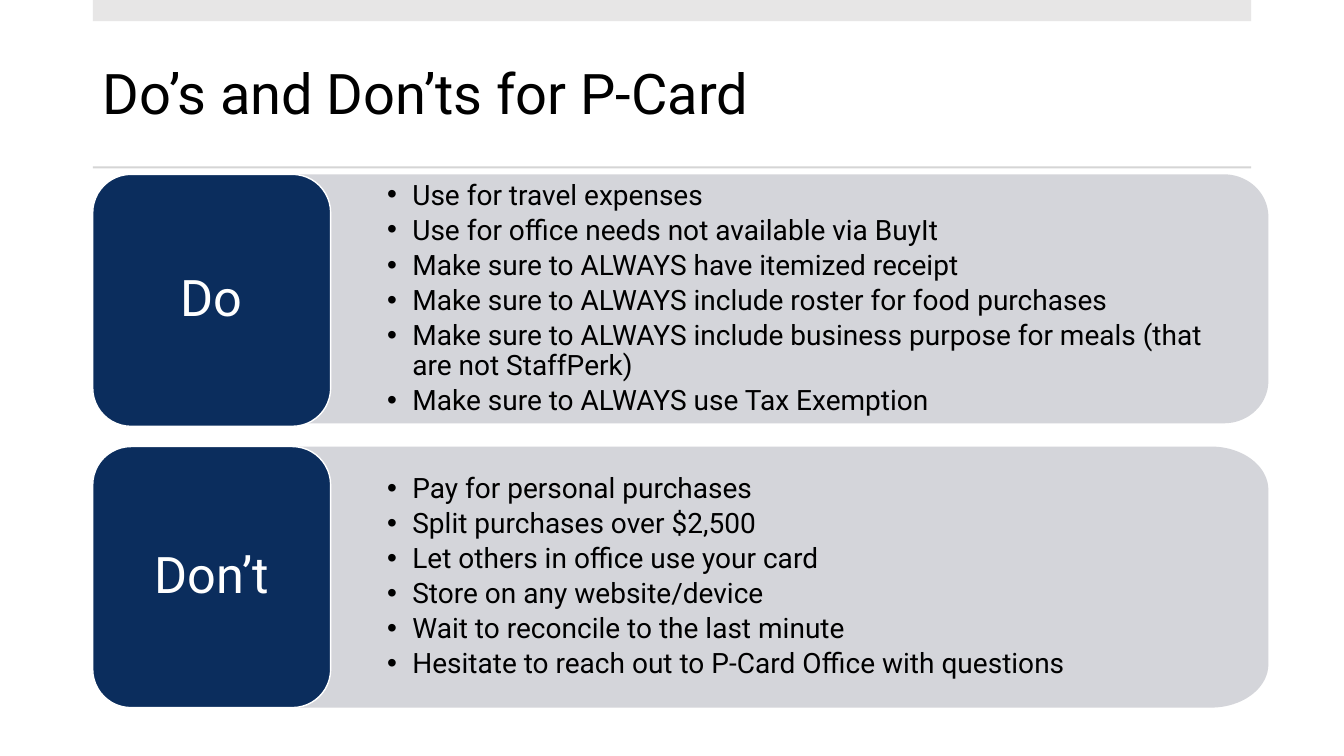
from math import cos, pi, sin

from lxml.etree import SubElement
from pptx import Presentation
from pptx.dml.color import RGBColor
from pptx.enum.shapes import MSO_SHAPE
from pptx.enum.text import MSO_ANCHOR, PP_ALIGN
from pptx.oxml.ns import qn
from pptx.util import Inches, Pt

TITLE = "Do’s and Don’ts for P-Card"
SECTIONS = [
    {
        "label": "Do",
        "top": 1.73, "panel_height": 2.47, "label_height": 2.5,
        "corner": (0.44, 0.42), "margins": (0.5, 0.26, 0.39, 0.26),
        "items": [
            "Use for travel expenses",
            "Use for office needs not available via BuyIt",
            "Make sure to ALWAYS have itemized receipt",
            "Make sure to ALWAYS include roster for food purchases",
            "Make sure to ALWAYS include business purpose for meals (that are not StaffPerk)",
            "Make sure to ALWAYS use Tax Exemption",
        ],
    },
    {
        "label": "Don’t",
        "top": 4.43, "panel_height": 2.59, "label_height": 2.59,
        "corner": (0.57, 0.43), "margins": (0.5, 0.16, 0.19, 0.16),
        "items": [
            "Pay for personal purchases",
            "Split purchases over $2,500",
            "Let others in office use your card",
            "Store on any website/device",
            "Wait to reconcile to the last minute",
            "Hesitate to reach out to P-Card Office with questions",
        ],
    },
]
BARS = [(0, 0.21, "E7E6E6"), (1.65, 0.02, "D5D5D5")]
LEFT, CONTENT_WIDTH = 0.92, 11.49
LABEL_WIDTH, LABEL_RADIUS = 2.36, 0.38
PANEL_LEFT, PANEL_RIGHT = 2.84, 12.58
ARC_STEPS = 24


def color(value):
    return RGBColor.from_string(value)


def paint(shape, fill):
    shape.shadow.inherit = False
    shape.fill.solid()
    shape.fill.fore_color.rgb = color(fill)
    shape.line.fill.background()


def set_frame(text_frame, margins):
    text_frame.word_wrap = True
    text_frame.vertical_anchor = MSO_ANCHOR.MIDDLE
    (text_frame.margin_left, text_frame.margin_top,
     text_frame.margin_right, text_frame.margin_bottom) = map(Inches, margins)


def style(paragraph, size, text_color, alignment=PP_ALIGN.LEFT):
    paragraph.alignment = alignment
    paragraph.line_spacing = 0.9
    for run in paragraph.runs:
        run.font.name = "Roboto"
        run.font.size = Pt(size)
        run.font.color.rgb = color(text_color)


def add_bullet(paragraph):
    properties = paragraph._p.get_or_add_pPr()
    properties.set("marL", str(Inches(0.75)))
    properties.set("indent", str(Inches(-0.25)))
    SubElement(properties, qn("a:buFont")).set("typeface", "Arial")
    SubElement(properties, qn("a:buChar")).set("char", "•")


def panel_outline(top, height, corner):
    radius_x, radius_y = corner
    bottom = top + height
    angles = [pi / 2 * step / ARC_STEPS for step in range(ARC_STEPS + 1)]
    upper = [(PANEL_RIGHT - radius_x * (1 - sin(angle)), top + radius_y * (1 - cos(angle)))
             for angle in angles]
    lower = [(x, top + bottom - y) for x, y in reversed(upper)]
    points = [(PANEL_LEFT, top), *upper, *lower, (PANEL_LEFT, bottom)]
    return [(Inches(x), Inches(y)) for x, y in points]


def add_panel(slide, section):
    start, *points = panel_outline(section["top"], section["panel_height"], section["corner"])
    builder = slide.shapes.build_freeform(*start)
    builder.add_line_segments(points, close=True)
    panel = builder.convert_to_shape()
    paint(panel, "D0D1D6")
    fill_color = panel._element.spPr.find(qn("a:solidFill"))[0]
    SubElement(fill_color, qn("a:alpha")).set("val", "90000")
    set_frame(panel.text_frame, section["margins"])
    panel.text_frame.text = "\n".join(section["items"])
    for paragraph in panel.text_frame.paragraphs:
        add_bullet(paragraph)
        style(paragraph, 20, "000000")
        paragraph.space_after = Pt(3.5)


def add_label(slide, section):
    label = slide.shapes.add_shape(
        MSO_SHAPE.ROUNDED_RECTANGLE, Inches(LEFT), Inches(section["top"]),
        Inches(LABEL_WIDTH), Inches(section["label_height"]))
    label.adjustments[0] = LABEL_RADIUS / min(LABEL_WIDTH, section["label_height"])
    paint(label, "0B2D5D")
    label.line.color.rgb = color("FFFFFF")
    label.line.width = Pt(1)
    set_frame(label.text_frame, (0.16, 0.08, 0.16, 0.08))
    label.text_frame.text = section["label"]
    style(label.text_frame.paragraphs[0], 36, "FFFFFF", PP_ALIGN.CENTER)


def main():
    presentation = Presentation()
    presentation.slide_width = Inches(13.33)
    presentation.slide_height = Inches(7.5)
    slide = presentation.slides.add_slide(presentation.slide_layouts[6])

    title = slide.shapes.add_textbox(
        Inches(LEFT), Inches(0.37), Inches(CONTENT_WIDTH), Inches(1.18))
    set_frame(title.text_frame, (0.1, 0.05, 0.1, 0.05))
    title.text_frame.text = TITLE
    style(title.text_frame.paragraphs[0], 40, "000000")

    for top, height, fill in BARS:
        bar = slide.shapes.add_shape(
            MSO_SHAPE.RECTANGLE, Inches(LEFT), Inches(top),
            Inches(CONTENT_WIDTH), Inches(height))
        paint(bar, fill)

    for section in SECTIONS:
        add_panel(slide, section)
        add_label(slide, section)

    presentation.save("out.pptx")


if __name__ == "__main__":
    main()
